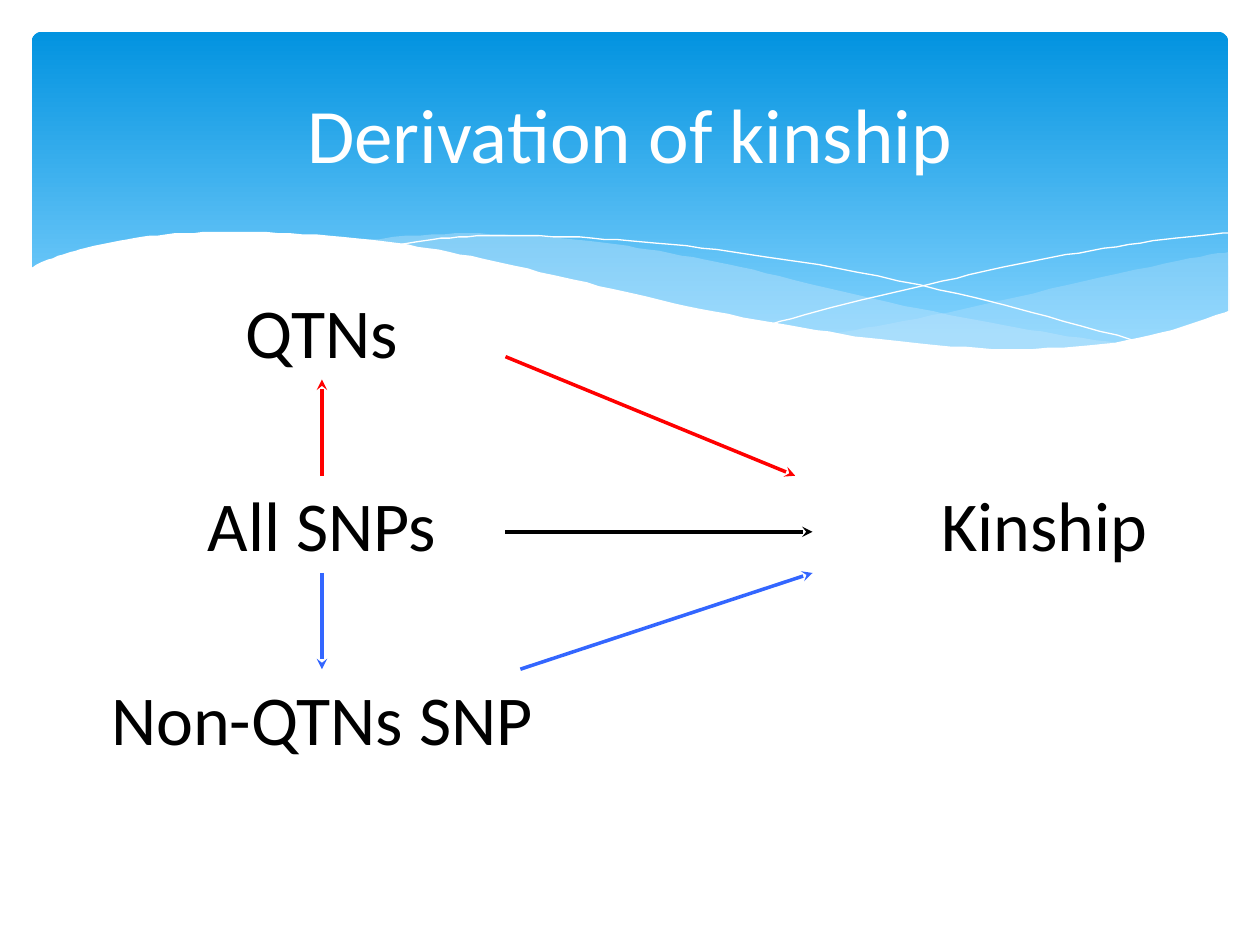
from collections import namedtuple

from lxml.etree import SubElement
from pptx import Presentation
from pptx.dml.color import RGBColor
from pptx.enum.shapes import MSO_CONNECTOR, MSO_SHAPE
from pptx.enum.text import MSO_ANCHOR as Anchor, PP_ALIGN as Align
from pptx.oxml.ns import qn
from pptx.util import Cm, Pt

WHITE = RGBColor(0xFF, 0xFF, 0xFF)
BLACK = RGBColor(0x00, 0x00, 0x00)
RED = RGBColor(0xFF, 0x00, 0x00)
BLUE = RGBColor(0x33, 0x66, 0xFF)
SKY_TOP = RGBColor(0x02, 0x93, 0xE0)
SKY_BOTTOM = RGBColor(0x83, 0xD3, 0xFE)
PALE = RGBColor(0xC6, 0xE7, 0xFC)

FONT = "Calibri"
Box = namedtuple("Box", "left top width height")

# Wave edges, in thousandths of the slide width
RIGHT_CREST = [(975, 200), (935, 207), (861, 223), (779, 242), (706, 257), (661, 265)]
RIGHT_TROUGH = [(661, 265), (705, 271), (757, 276), (814, 278), (863, 275),
                (905, 269), (942, 259), (976, 247)]
MIDDLE_TROUGH = [(893, 273), (837, 265), (775, 254), (706, 240), (629, 222), (569, 208),
                 (514, 198), (465, 191), (399, 186), (344, 186), (286, 191)]
MIDDLE_CREST = [(286, 191), (342, 199), (404, 211), (449, 222), (530, 240), (601, 255),
                (665, 266), (722, 274), (785, 278), (838, 278), (893, 273)]
FALLING_LINE = [(309, 195), (344, 190), (387, 187), (450, 188), (510, 192), (582, 200),
                (665, 213), (760, 233), (831, 251), (907, 272)]
RISING_LINE = [(613, 257), (672, 241), (748, 223), (806, 210), (866, 199),
               (924, 190), (975, 185)]
WHITE_EDGE = [(977, 246), (930, 262), (875, 273), (809, 277), (744, 274), (688, 268),
              (626, 258), (555, 245), (503, 233), (447, 220), (391, 207), (340, 197),
              (292, 190), (230, 185), (177, 184), (132, 186), (95, 191), (67, 197),
              (46, 203), (23, 213)]
WHITE_BASE = [(23, 329), (977, 329)]


def smooth(knots, steps=6):
    """Return points along a Catmull-Rom curve through the knots."""
    padded = [knots[0], *knots, knots[-1]]
    points = [knots[0]]
    for quad in zip(padded, padded[1:], padded[2:], padded[3:]):
        for step in range(1, steps + 1):
            t = step / steps
            points.append(tuple(
                (2 * b + (c - a) * t + (2 * a - 5 * b + 4 * c - d) * t ** 2
                 + (3 * b - a - 3 * c + d) * t ** 3) / 2
                for a, b, c, d in zip(*quad)))
    return points


def add_curve(slide, box, points, closed):
    builder = slide.shapes.build_freeform(*points[0], scale=Cm(box.width) / 1000)
    builder.add_line_segments(points[1:], close=closed)
    curve = builder.convert_to_shape(Cm(box.left), Cm(box.top))
    curve.shadow.inherit = False
    return curve


def add_wave(slide, box, points, color, opacity=100):
    wave = add_curve(slide, box, points, closed=True)
    wave.fill.solid()
    wave.fill.fore_color.rgb = color
    wave.line.fill.background()
    if opacity < 100:
        tone = wave.fill._xPr.find(qn("a:solidFill"))[0]
        SubElement(tone, qn("a:alpha"), val=str(opacity * 1000))


def add_hairline(slide, box, points):
    hairline = add_curve(slide, box, points, closed=False)
    hairline.fill.background()
    hairline.line.color.rgb = WHITE
    hairline.line.width = Pt(0)


def add_label(slide, box, words, size, color, anchor=Anchor.TOP):
    label = slide.shapes.add_textbox(*map(Cm, box))
    frame = label.text_frame
    frame.word_wrap = True
    frame.vertical_anchor = anchor
    paragraph = frame.paragraphs[0]
    paragraph.alignment = Align.CENTER
    run = paragraph.add_run()
    run.text = words
    run.font.name = FONT
    run.font.size = Pt(size)
    run.font.color.rgb = color


def add_arrow(slide, box, start, end, color):
    ends = [Cm(box[i] + point[i]) for point in (start, end) for i in (0, 1)]
    arrow = slide.shapes.add_connector(MSO_CONNECTOR.STRAIGHT, *ends)
    arrow.line.color.rgb = color
    arrow.line.width = Pt(2)
    SubElement(arrow.line._get_or_add_ln(), qn("a:tailEnd"), type="stealth")
    SubElement(arrow._element.spPr, qn("a:effectLst"))


def add_header(slide, box):
    """Place the blue banner, its waves and the title across the box."""
    margin = 0.64
    banner = slide.shapes.add_shape(
        MSO_SHAPE.ROUNDED_RECTANGLE, Cm(box.left + margin), Cm(box.top + margin),
        Cm(box.width - 2 * margin), Cm(6.86))
    banner.adjustments[0] = 0.03
    banner.shadow.inherit = False
    banner.line.fill.background()
    banner.fill.gradient()
    banner.fill.gradient_angle = 270
    for stop, position, color in zip(banner.fill.gradient_stops, (0, 0.9),
                                     (SKY_TOP, SKY_BOTTOM)):
        stop.position = position
        stop.color.rgb = color

    add_wave(slide, box, smooth(RIGHT_CREST) + smooth(RIGHT_TROUGH), PALE, 29)
    add_wave(slide, box, smooth(MIDDLE_TROUGH) + smooth(MIDDLE_CREST), PALE, 40)
    add_hairline(slide, box, smooth(FALLING_LINE))
    add_hairline(slide, box, smooth(RISING_LINE))
    add_wave(slide, box, smooth(WHITE_EDGE) + WHITE_BASE, WHITE)

    title = Box(box.left + 1.27, box.top + 0.94, box.width - 2.54, 3.48)
    add_label(slide, title, "Derivation of kinship", 44, WHITE, Anchor.MIDDLE)


def add_kinship_diagram(slide, box):
    """Place three stacked SNP sets on the left and arrows to kinship on the right."""
    row_height = 1.96
    pitch = (box.height - row_height) / 2
    center = 5.22
    middle, bottom = pitch, 2 * pitch

    for row, (words, width) in enumerate(
            [("QTNs", 8.86), ("All SNPs", 8.86), ("Non-QTNs SNP", 10.44)]):
        label = Box(box.left + center - width / 2, box.top + row * pitch, width, row_height)
        add_label(slide, label, words, 40, BLACK)
    kinship_width = 7.11
    kinship = Box(box.left + box.width - kinship_width, box.top + middle,
                  kinship_width, row_height)
    add_label(slide, kinship, "Kinship", 40, BLACK)

    below_middle = middle + row_height
    for start, end, color in [
            ((center, middle), (center, row_height), RED),
            ((center, below_middle), (center, bottom), BLUE),
            ((8.92, 1.5), (14.76, middle), RED),
            ((9.22, bottom), (15.11, below_middle), BLUE),
            ((8.92, 5.03), (15.11, 5.03), BLACK)]:
        add_arrow(slide, box, start, end, color)


def main():
    deck = Presentation()
    deck.slide_width, deck.slide_height = Cm(25.4), Cm(19.05)
    slide = deck.slides.add_slide(deck.slide_layouts[6])
    add_header(slide, Box(0, 0, 25.4, 8.36))
    add_kinship_diagram(slide, Box(1.27, 5.69, 23.34, 9.76))
    deck.save("out.pptx")


if __name__ == "__main__":
    main()
